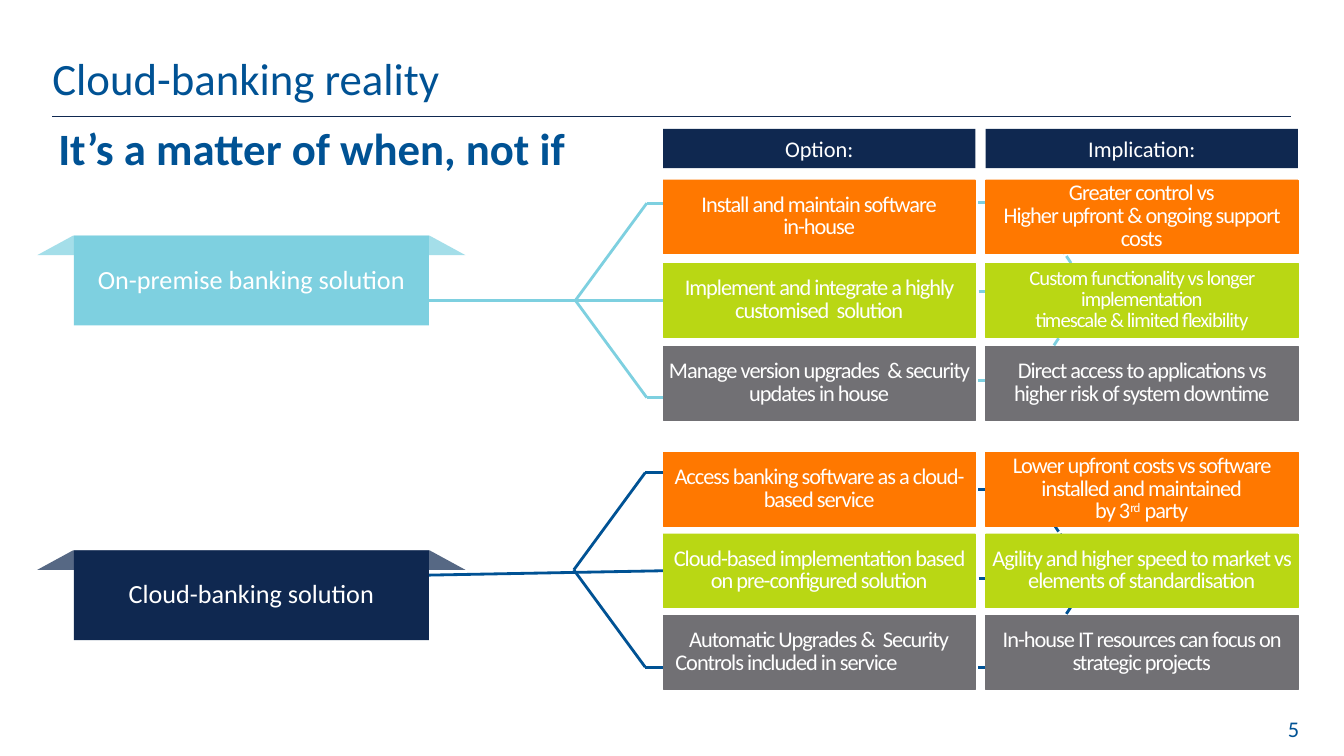
import pptx
import pptx.util
import pptx.dml.color
import pptx.enum.dml
import pptx.enum.shapes
import pptx.enum.text
import pptx.oxml.ns
import lxml.etree

Cm = pptx.util.Cm
Pt = pptx.util.Pt
Align = pptx.enum.text.PP_ALIGN
Anchor = pptx.enum.text.MSO_ANCHOR
qn = pptx.oxml.ns.qn

HUES = {"navy": "0F2850", "blue": "005294", "aqua": "7ED0E0", "orange": "FF7800",
        "lime": "B9D714", "grey": "717074", "white": "FFFFFF"}
CARDS = ("orange", "lime", "grey")
LEFT, RIGHT = 16.71, 24.84
WIDE = 7.87

HOUSE = [
    ([["Install and maintain software\nin-house"]],
     [["Greater control vs\nHigher upfront & ongoing support costs"]]),
    ([["Implement and integrate a highly customised  solution"]],
     [["Custom functionality vs longer implementation"], ["timescale & limited flexibility"]]),
    ([["Manage version upgrades  & security updates in house"]],
     [["Direct access to applications vs higher risk of system downtime"]]),
]
CLOUD = [
    ([["Access banking software as a cloud-based service"]],
     [["Lower upfront costs vs software installed and maintained\nby 3", "^rd", " party"]]),
    ([["Cloud-based implementation based on pre-configured solution"]],
     [["Agility and higher speed to market vs elements of standardisation"]]),
    ([["Automatic Upgrades &  Security"], ["Controls included in service"]],
     [["In-house IT resources can focus on strategic projects"]]),
]


def tint(name):
    return pptx.dml.color.RGBColor.from_string(HUES[name])


def write(shape, paras, size, hue="white", align=Align.CENTER, anchor=Anchor.MIDDLE,
          pads=(0.13, 0), lead=None, track=None, bold=False):
    frame = shape.text_frame
    frame.word_wrap = True
    frame.vertical_anchor = anchor
    frame.margin_left = frame.margin_right = Cm(pads[0])
    frame.margin_top = frame.margin_bottom = Cm(pads[1])
    for i, parts in enumerate(paras):
        para = frame.paragraphs[0] if i == 0 else frame.add_paragraph()
        para.alignment = align
        if lead:
            para.line_spacing = lead
        for part in parts:
            for j, piece in enumerate(part.split("\n")):
                if j:
                    para.add_line_break()
                run = para.add_run()
                run.text = piece.lstrip("^")
                run.font.name = "Calibri"
                run.font.size = Pt(size)
                run.font.bold = bold
                run.font.color.rgb = tint(hue)
                props = run._r.get_or_add_rPr()
                if track:
                    props.set("spc", str(track))
                if piece.startswith("^"):
                    props.set("baseline", "30000")
    return frame


def label(slide, x, y, w, h, text, size, **style):
    box = slide.shapes.add_textbox(Cm(x), Cm(y), Cm(w), Cm(h))
    write(box, [[text]], size, hue="blue", **style)


def block(slide, x, y, w, h, hue, edge=False):
    rect = slide.shapes.add_shape(pptx.enum.shapes.MSO_SHAPE.RECTANGLE,
                                  Cm(x), Cm(y), Cm(w), Cm(h))
    rect.shadow.inherit = False
    rect.fill.solid()
    rect.fill.fore_color.rgb = tint(hue)
    if edge:
        rect.line.color.rgb = tint(hue)
        rect.line.width = Pt(0.25)
    else:
        rect.line.fill.background()
    return rect


def stroke(slide, start, end, hue, width=2, dash=False):
    line = slide.shapes.add_connector(pptx.enum.shapes.MSO_CONNECTOR.STRAIGHT,
                                      Cm(start[0]), Cm(start[1]), Cm(end[0]), Cm(end[1]))
    line.line.color.rgb = tint(hue)
    line.line.width = Pt(width)
    if dash:
        line.line.dash_style = pptx.enum.dml.MSO_LINE.SQUARE_DOT
    lxml.etree.SubElement(line._element.spPr, qn("a:effectLst"))


def fork(slide, x, y, run, tail, half, hue, dash=False):
    for side in (1, -1):
        bend = (x + run, y + side * half)
        stroke(slide, (x, y), bend, hue, dash=dash)
        stroke(slide, bend, (bend[0] + tail, bend[1]), hue, dash=dash)


def banner(slide, x, y, w, h, hue, text):
    fold, drop = 0.9, 0.49
    build = slide.shapes.build_freeform(Cm(x + w - fold), Cm(y))
    build.add_line_segments([(Cm(x + fold), Cm(y)), (Cm(x), Cm(y + drop)),
                             (Cm(x + w), Cm(y + drop))], close=True)
    flap = build.convert_to_shape()
    flap.shadow.inherit = False
    flap.fill.solid()
    flap.fill.fore_color.rgb = tint(hue)
    flap.line.fill.background()
    color = flap._element.spPr.find(qn("a:solidFill"))[0]
    lxml.etree.SubElement(color, qn("a:alpha")).set("val", "70000")
    rect = block(slide, x + fold + 0.02, y, w - 2 * fold - 0.04, h, hue)
    write(rect, [[text]], 18.7, pads=(0.25, 0.13), lead=0.9)


def cards(slide, y, pitch, rows):
    for i, (row, hue) in enumerate(zip(rows, CARDS)):
        for x, paras in zip((LEFT, RIGHT), row):
            rect = block(slide, x, y + i * pitch, WIDE, 1.86, hue, edge=True)
            small = paras[0][0].startswith("Custom")
            frame = write(rect, paras, 14.7 if small else 16, lead=0.85, track=-70)
            if paras[0][0].startswith("Automatic"):
                last = frame.paragraphs[1]
                last.alignment = Align.LEFT
                last._p.get_or_add_pPr().set("marL", str(Cm(0.18)))


def branch(slide, y, pitch, hub, trunk, tip, reach, hue, ink, top, text, rows):
    fork(slide, hub[0], hub[1], 1.8, 1.6, 2.45, ink)
    fork(slide, 27.46, tip, -1.48, -1.34, 2.24, ink, dash=True)
    stroke(slide, (24.66, tip), (reach, tip), ink, dash=True)
    stroke(slide, (10.39, trunk), (17.88, hub[1]), ink)
    cards(slide, y, pitch, rows)
    banner(slide, 0.94, top, 10.79, 2.26, hue, text)


def header(slide, x, y, w):
    label(slide, x, y, w, 1.8, "Cloud-banking reality", 32, align=Align.LEFT,
          anchor=Anchor.BOTTOM, pads=(0, 0), lead=Pt(32))
    stroke(slide, (x, y + 2.09), (x + w, y + 2.09), "navy", width=0.75)
    label(slide, x - 0.1, y + 2.08, 20.3, 1.63, "It’s a matter of when, not if", 32,
          align=Align.LEFT, anchor=Anchor.TOP, pads=(0.25, 0.13), bold=True)
    for left, text in ((LEFT, "Option:"), (RIGHT, "Implication:")):
        rect = block(slide, left, y + 2.41, WIDE, 0.99, "navy")
        write(rect, [[text]], 16, pads=(0.25, 0))


def main():
    deck = pptx.Presentation()
    deck.slide_width, deck.slide_height = Cm(33.87), Cm(19.05)
    slide = deck.slides.add_slide(deck.slide_layouts[6])
    header(slide, 1.32, 0.84, 31.22)
    branch(slide, 4.53, 2.1, (14.5, 7.57), 7.57, 7.34, 31.14, "aqua", "aqua",
           5.94, "On-premise banking solution", HOUSE)
    branch(slide, 11.4, 2.05, (14.46, 14.36), 14.5, 14.58, 31.27, "navy", "blue",
           13.87, "Cloud-banking solution", CLOUD)
    label(slide, 31.24, 18.08, 1.6, 0.62, "5", 16, align=Align.RIGHT,
          anchor=Anchor.BOTTOM, pads=(0.1, 0))
    deck.save("out.pptx")


if __name__ == "__main__":
    main()
